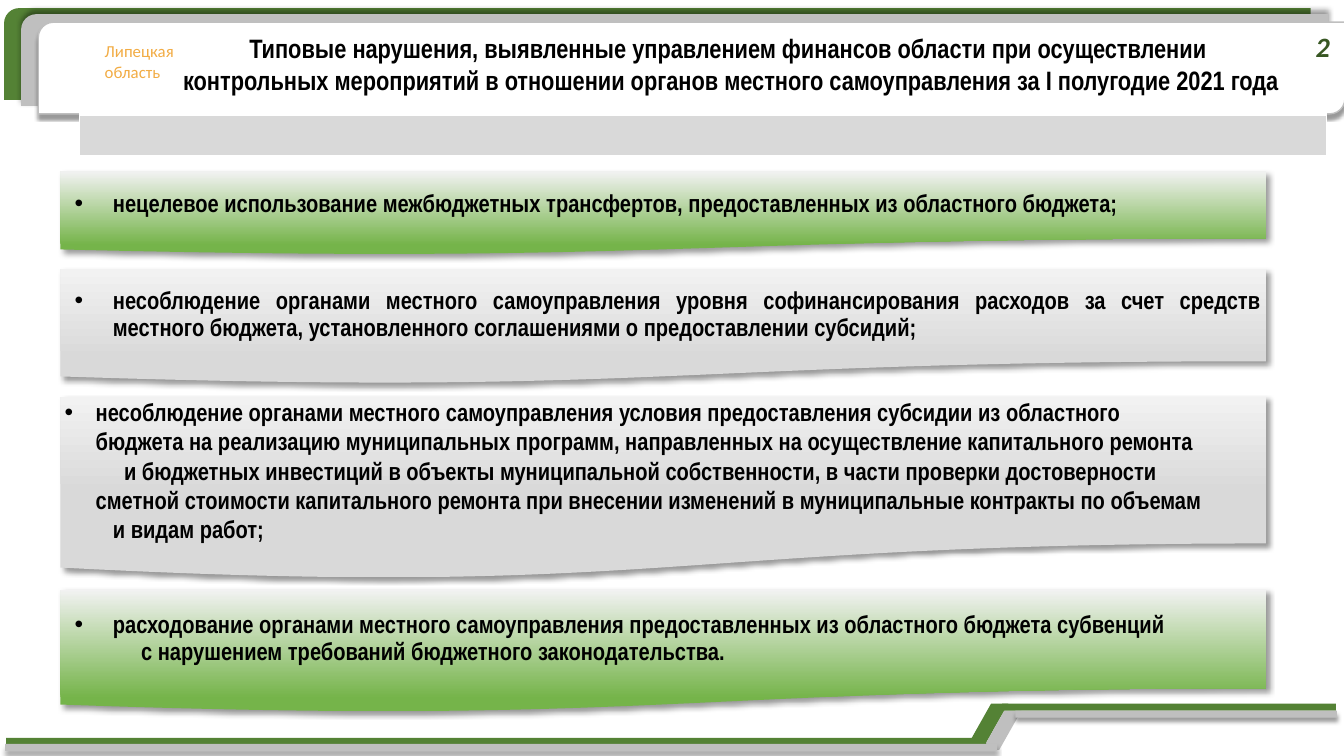
import pptx
import pptx.util
import pptx.dml.color
import pptx.enum.shapes
import pptx.enum.text
import pptx.oxml
import pptx.oxml.ns
from lxml import etree

Inches = pptx.util.Inches
Pt = pptx.util.Pt
RGBColor = pptx.dml.color.RGBColor
MSO_SHAPE = pptx.enum.shapes.MSO_SHAPE
PP_ALIGN = pptx.enum.text.PP_ALIGN
MSO_ANCHOR = pptx.enum.text.MSO_ANCHOR
qn = pptx.oxml.ns.qn

GREEN = RGBColor(0x54, 0x82, 0x35)
LIGHT_GREEN = RGBColor(0x75, 0xB4, 0x4A)
DARK_GREEN = RGBColor(0x38, 0x57, 0x23)
ORANGE = RGBColor(0xF2, 0xAC, 0x44)
GRAY = RGBColor(0xBF, 0xBF, 0xBF)
PALE_GRAY = RGBColor(0xD9, 0xD9, 0xD9)
NEAR_WHITE = RGBColor(0xF2, 0xF2, 0xF2)
WHITE = RGBColor(0xFF, 0xFF, 0xFF)
BLACK = RGBColor(0, 0, 0)


def add_panel(kind, x, y, w, h, fill=None, shadow=None):
    sp = s.shapes.add_shape(kind, Inches(x), Inches(y), Inches(w), Inches(h))
    sp.shadow.inherit = False
    sp.line.fill.background()
    if fill is not None:
        sp.fill.solid()
        sp.fill.fore_color.rgb = fill
    if shadow:
        blur, dist, angle = shadow
        effects = sp._element.spPr.find(qn("a:effectLst"))
        outer = etree.SubElement(effects, qn("a:outerShdw"), blurRad=str(Pt(blur)),
                                 dist=str(Pt(dist)), dir=str(angle * 60000), rotWithShape="0")
        color = etree.SubElement(outer, qn("a:srgbClr"), val="000000")
        etree.SubElement(color, qn("a:alpha"), val="40000")
    return sp


def add_run(p, text, font, size, color, bold=False, italic=False):
    r = p.add_run()
    r.text = text
    r.font.name = font
    r.font.size = Pt(size)
    r.font.color.rgb = color
    r.font.bold = bold
    r.font.italic = italic


prs = pptx.Presentation()
prs.slide_width = Inches(13.33)
prs.slide_height = Inches(7.5)
s = prs.slides.add_slide(prs.slide_layouts[6])

for x, y, color, shadow in [(0.04, 0.08, GREEN, None), (0.21, 0.14, GRAY, (4, 3, 270)),
                            (0.38, 0.22, WHITE, (2, 3, 90))]:
    header = add_panel(MSO_SHAPE.ROUND_2_DIAG_RECTANGLE, x, y, 12.96, 0.91, color, shadow)
header.line.color.rgb = GRAY
header.line.width = Pt(1)

for x, y, color in [(9.61, 6.98, GREEN), (9.74, 7.05, GRAY)]:
    corners = [(x + 0.22, y), (x + 0.39, y), (x + 0.17, y + 0.39)]
    fb = s.shapes.build_freeform(Inches(x), Inches(y + 0.39))
    fb.add_line_segments([(Inches(px), Inches(py)) for px, py in corners], close=True)
    slant = fb.convert_to_shape()
    slant.shadow.inherit = False
    slant.fill.solid()
    slant.fill.fore_color.rgb = color
    slant.line.fill.background()

for x, y, w, color, shadow in [(0.06, 7.32, 9.72, GREEN, None), (9.94, 6.98, 3.31, GREEN, None),
                               (0.05, 7.38, 9.84, GRAY, (3, 3, 90)),
                               (10.07, 7.05, 3.19, GRAY, (3, 3, 90))]:
    add_panel(MSO_SHAPE.RECTANGLE, x, y, w, 0.07, color, shadow)

title = ["Типовые нарушения, выявленные управлением финансов области при осуществлении ",
         "контрольных мероприятий в отношении органов местного самоуправления за I полугодие 2021 года"]
labels = [
    (0.94, 0.36, 0.91, 0.5, ["Липецкая", "область"], PP_ALIGN.LEFT, ("Calibri", 12, ORANGE)),
    (1.49, 0.27, 11.52, 0.74, title, PP_ALIGN.CENTER, ("Arial Narrow", 19, BLACK, True)),
    (12.95, 0.27, 0.28, 0.37, ["2"], PP_ALIGN.CENTER, ("Calibri", 20, DARK_GREEN, True, True)),
]
for x, y, w, h, lines, align, style in labels:
    tf = s.shapes.add_textbox(Inches(x), Inches(y), Inches(w), Inches(h)).text_frame
    tf.word_wrap = len(lines) > 1
    tf.vertical_anchor = MSO_ANCHOR.TOP if len(lines) > 1 else MSO_ANCHOR.MIDDLE
    for i, line in enumerate(lines):
        p = tf.paragraphs[0] if i == 0 else tf.add_paragraph()
        p.alignment = align
        add_run(p, line, *style)

table = s.shapes.add_table(2, 1, Inches(0.79), Inches(1.01), Inches(12.37), Inches(0.53)).table
table.rows[0].height = Inches(0.12)
table.rows[1].height = Inches(0.41)
spacer, band = table.cell(0, 0), table.cell(1, 0)
spacer.fill.background()
spacer.margin_top = spacer.margin_bottom = 0
band.fill.solid()
band.fill.fore_color.rgb = PALE_GRAY
for cell, bottom, size in [(spacer, 3, 1), (band, 1, 12)]:
    etree.SubElement(cell.text_frame.paragraphs[0]._p, qn("a:endParaRPr"), sz=str(size * 100))
    tcPr = cell._tc.get_or_add_tcPr()
    for i, (side, width) in enumerate([("L", 1), ("R", 1), ("T", 1), ("B", bottom)]):
        ln = etree.Element(qn("a:ln" + side), w=str(Pt(width)))
        fill = etree.SubElement(ln, qn("a:solidFill"))
        etree.SubElement(fill, qn("a:srgbClr"), val=str(WHITE))
        tcPr.insert(i, ln)

violations = [
    (1.7, 0.83, LIGHT_GREEN, 0.12, 0.48, 0.38, 0.9, [],
     ["нецелевое использование межбюджетных трансфертов, предоставленных из областного бюджета;"]),
    (2.67, 1.14, PALE_GRAY, 0.22, 0.48, 0.38, 0.9, [],
     ["несоблюдение органами местного самоуправления уровня софинансирования расходов за счет средств "
      "местного бюджета, установленного соглашениями о предоставлении субсидий;"]),
    (3.94, 1.81, PALE_GRAY, 0.48, 0.31, 0.31, 1.0, [0.48, 0.59],
     ["несоблюдение органами местного самоуправления условия предоставления субсидии из областного",
      "бюджета на реализацию муниципальных программ, направленных на осуществление капитального ремонта",
      "\t\tи бюджетных инвестиций в объекты муниципальной собственности, в части проверки достоверности",
      "сметной стоимости капитального ремонта при внесении изменений в муниципальные контракты по объемам",
      "\tи видам работ;"]),
    (5.85, 1.22, LIGHT_GREEN, 0.12, 0.48, 0.38, 0.9, [0.76],
     ["расходование органами местного самоуправления предоставленных из областного бюджета субвенций",
      "\tс нарушением требований бюджетного законодательства."]),
]
for y, h, color, start, margin, hang, spacing, tabs, lines in violations:
    sp = add_panel(MSO_SHAPE.FLOWCHART_DOCUMENT, 0.6, y, 11.96, h, shadow=(4, 3, 45))
    sp.fill.gradient()
    sp.fill.gradient_angle = 90
    for stop, position, stop_color in zip(sp.fill.gradient_stops, (start, 1), (color, NEAR_WHITE)):
        stop.position = position
        stop.color.rgb = stop_color
    tf = sp.text_frame
    tf.word_wrap = True
    tf.vertical_anchor = MSO_ANCHOR.MIDDLE
    tf.margin_left = tf.margin_right = tf.margin_top = tf.margin_bottom = Inches(0.04)
    p = tf.paragraphs[0]
    p.alignment = PP_ALIGN.LEFT if tabs else PP_ALIGN.JUSTIFY
    p.line_spacing = spacing
    pPr = p._p.get_or_add_pPr()
    pPr.set("marL", str(Inches(margin)))
    pPr.set("indent", str(-Inches(hang)))
    etree.SubElement(pPr, qn("a:buFont"), typeface="Arial")
    etree.SubElement(pPr, qn("a:buChar"), char="•")
    if tabs:
        tab_list = etree.SubElement(pPr, qn("a:tabLst"))
        for tab in tabs:
            etree.SubElement(tab_list, qn("a:tab"), pos=str(Inches(tab)), algn="l")
    for i, line in enumerate(lines):
        if i:
            p.add_line_break()
        add_run(p, line, "Arial Narrow", 17.5, BLACK, True)

prs.save("out.pptx")
